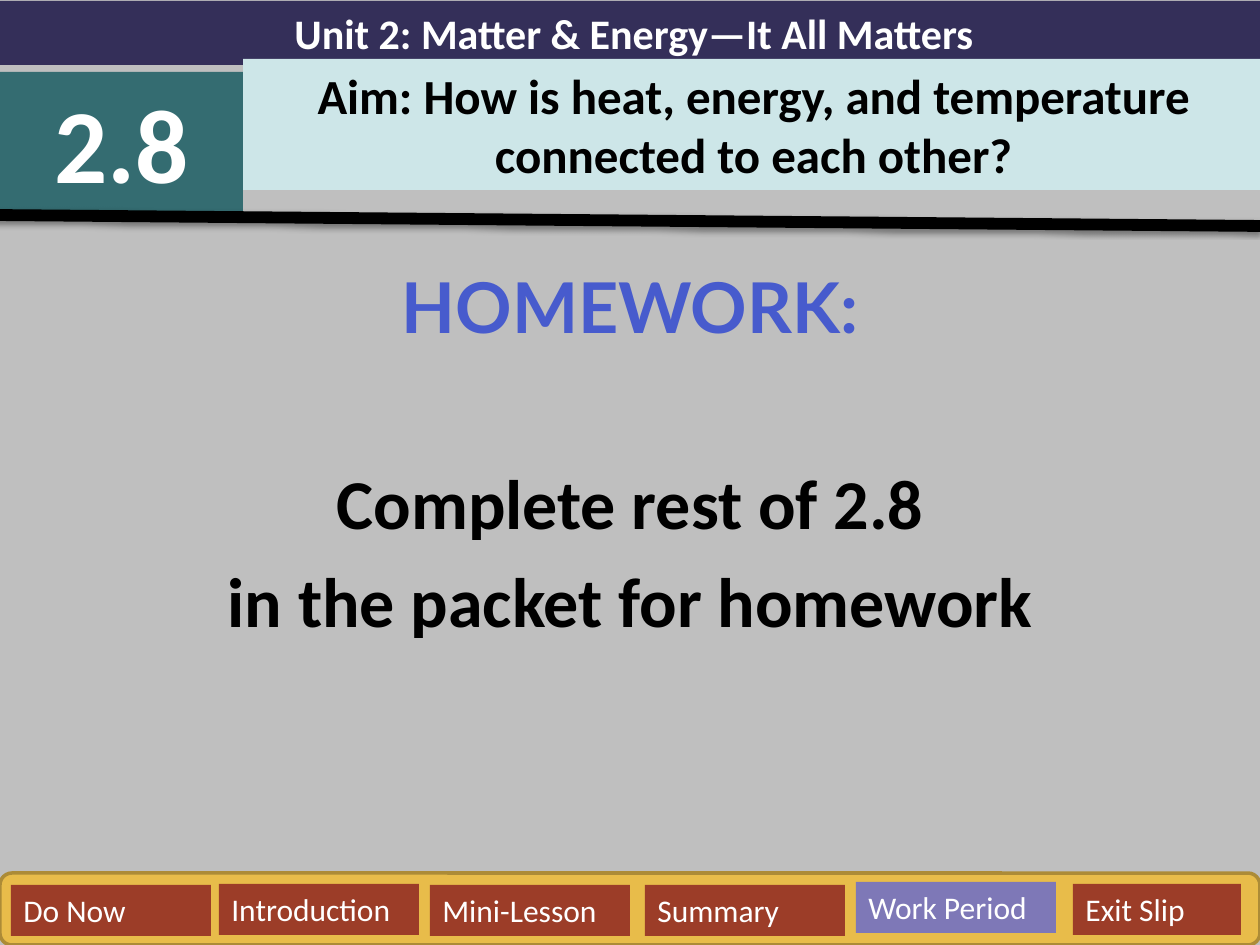
"""Build the homework slide of lesson 2.8 with its header and lesson tabs."""
import lxml.etree
import pptx
import pptx.dml.color
import pptx.enum.shapes
import pptx.enum.text
import pptx.oxml
import pptx.oxml.ns
import pptx.util

RGBColor = pptx.dml.color.RGBColor
SHAPE = pptx.enum.shapes.MSO_SHAPE
ALIGN = pptx.enum.text.PP_ALIGN
Pt = pptx.util.Pt

GREY = RGBColor(0xBF, 0xBF, 0xBF)
BLACK = RGBColor(0, 0, 0)
WHITE = RGBColor(0xFF, 0xFF, 0xFF)
BLUE = RGBColor(0x47, 0x5B, 0xCD)
NAVY = RGBColor(0x34, 0x2F, 0x59)
TEAL = RGBColor(0x34, 0x6C, 0x71)
PALE = RGBColor(0xCD, 0xE6, 0xE8)
GOLD = RGBColor(0xE8, 0xBC, 0x4A)
DARK_GOLD = RGBColor(0xAC, 0x8B, 0x37)
RED = RGBColor(0x9C, 0x3D, 0x28)
VIOLET = RGBColor(0x7E, 0x78, 0xB7)
EMU_PER_PX = 914400 / 126


def place(shape, *box):
    for side, length in zip(("left", "top", "width", "height"), box):
        setattr(shape, side, round(length * EMU_PER_PX))
    return shape


def write(shape, lines, align):
    frame = shape.text_frame
    frame.word_wrap = True
    frame.auto_size = pptx.enum.text.MSO_AUTO_SIZE.NONE
    frame.vertical_anchor = pptx.enum.text.MSO_ANCHOR.TOP
    frame.text = "\n".join(text for text, _, _ in lines)
    for paragraph, (_, font_format, space) in zip(frame.paragraphs, lines):
        paragraph.alignment = align
        paragraph.space_before = Pt(space)
        for name, value in font_format.items():
            if name == "color":
                paragraph.runs[0].font.color.rgb = value
            else:
                setattr(paragraph.runs[0].font, name, value)


deck = pptx.Presentation()
deck.slide_width = pptx.util.Inches(10)
deck.slide_height = pptx.util.Inches(7.5)
slide = deck.slides.add_slide(deck.slide_layouts[0])
slide.background.fill.solid()
slide.background.fill.fore_color.rgb = GREY

heading = {"name": "Lato", "size": Pt(40), "bold": True, "color": BLUE}
task = {**heading, "name": "Calibri", "color": BLACK}
homework = place(slide.placeholders[1], 0, 257, 1260, 688)
write(homework, [
    ("HOMEWORK:", heading, 8),
    ("Complete rest of 2.8", task, 64),
    ("in the packet for homework", task, 8),
], ALIGN.CENTER)

aim = slide.shapes.title
banners = [
    (None, "Unit 2: Matter & Energy—It All Matters", (0, 1, 1268, 64), NAVY, WHITE, 24),
    (None, "2.8", (0, 72, 243, 140), TEAL, WHITE, 60),
    (aim, "Aim: How is heat, energy, and temperature connected to each other?",
     (243, 59, 1021, 131), PALE, BLACK, 28),
]
for banner, text, box, fill, color, size in banners:
    if banner is None:
        banner = slide.shapes.add_shape(SHAPE.RECTANGLE, 0, 0, 0, 0)
        banner.shadow.inherit = False
    else:
        slide.shapes._spTree.append(banner._element)
    place(banner, *box)
    banner.fill.solid()
    banner.fill.fore_color.rgb = fill
    banner.line.fill.background()
    font_format = {"name": "Calibri", "size": Pt(size), "bold": True, "color": color}
    write(banner, [(text, font_format, 0)], ALIGN.CENTER)

divider = slide.shapes.add_connector(
    pptx.enum.shapes.MSO_CONNECTOR.STRAIGHT,
    *(round(length * EMU_PER_PX) for length in (-6, 215, 1260, 226)))
divider.line.color.rgb = BLACK
divider.line.width = Pt(6.75)
qn = pptx.oxml.ns.qn
effects = lxml.etree.SubElement(divider._element.spPr, qn("a:effectLst"))
shadow = lxml.etree.SubElement(effects, qn("a:outerShdw"), blurRad=str(Pt(3.1)),
                               dist=str(Pt(1.6)), dir="5400000", rotWithShape="0")
shade = lxml.etree.SubElement(shadow, qn("a:srgbClr"), val="000000")
lxml.etree.SubElement(shade, qn("a:alpha"), val="38000")

agenda = place(slide.shapes.add_shape(SHAPE.ROUNDED_RECTANGLE, 0, 0, 0, 0), 0, 873, 1260, 72)
agenda.shadow.inherit = False
agenda.fill.solid()
agenda.fill.fore_color.rgb = GOLD
agenda.line.color.rgb = DARK_GOLD
agenda.line.width = Pt(2)

tab_format = {"name": "Calibri", "size": Pt(18), "color": WHITE}
stages = [
    ("Do Now", 11, 885, 200, RED),
    ("Introduction", 219, 884, 200, RED),
    ("Mini-Lesson", 430, 885, 200, RED),
    ("Summary", 645, 885, 200, RED),
    ("Work Period", 856, 882, 200, VIOLET),
    ("Exit Slip", 1073, 884, 168, RED),
]
for stage, left, top, width, fill in stages:
    tab = place(slide.shapes.add_shape(SHAPE.RECTANGLE, 0, 0, 0, 0), left, top, width, 51)
    tab.shadow.inherit = False
    tab.fill.solid()
    tab.fill.fore_color.rgb = fill
    tab.line.fill.background()
    write(tab, [(stage, tab_format, 0)], ALIGN.LEFT)

deck.save("out.pptx")
